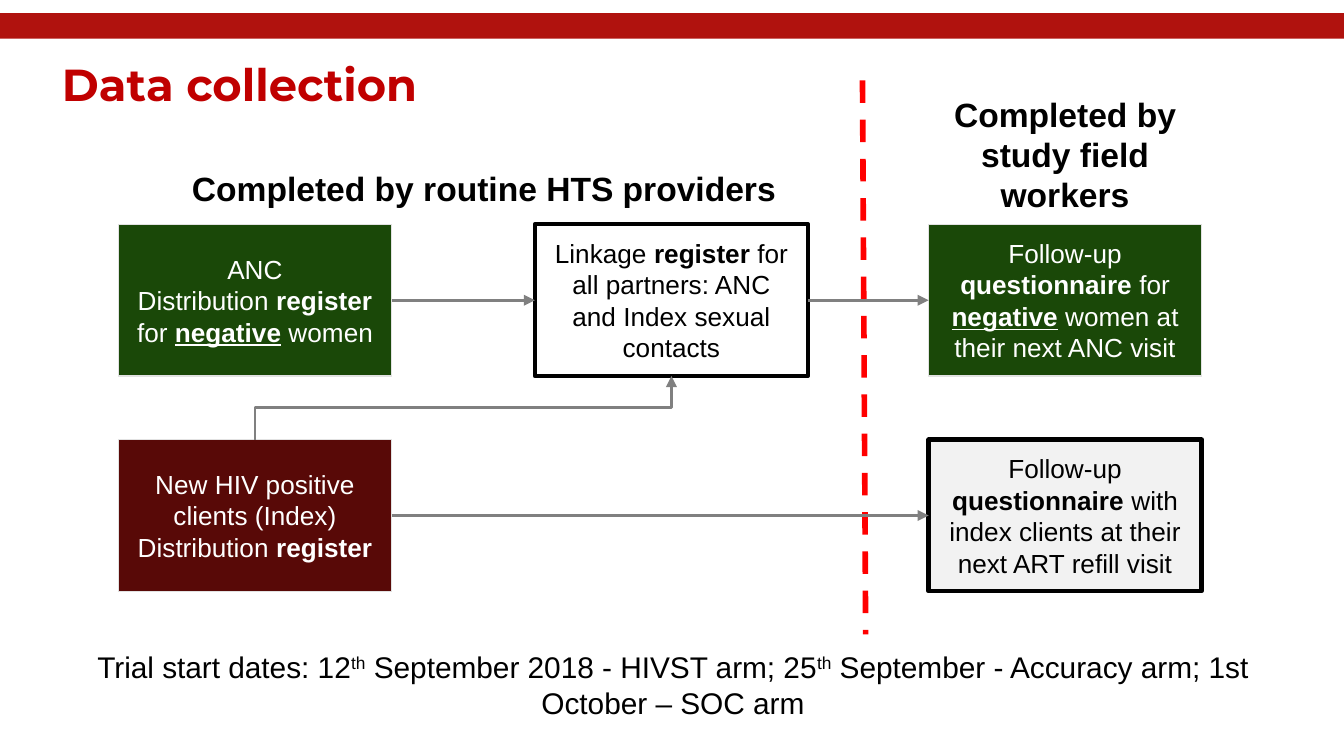
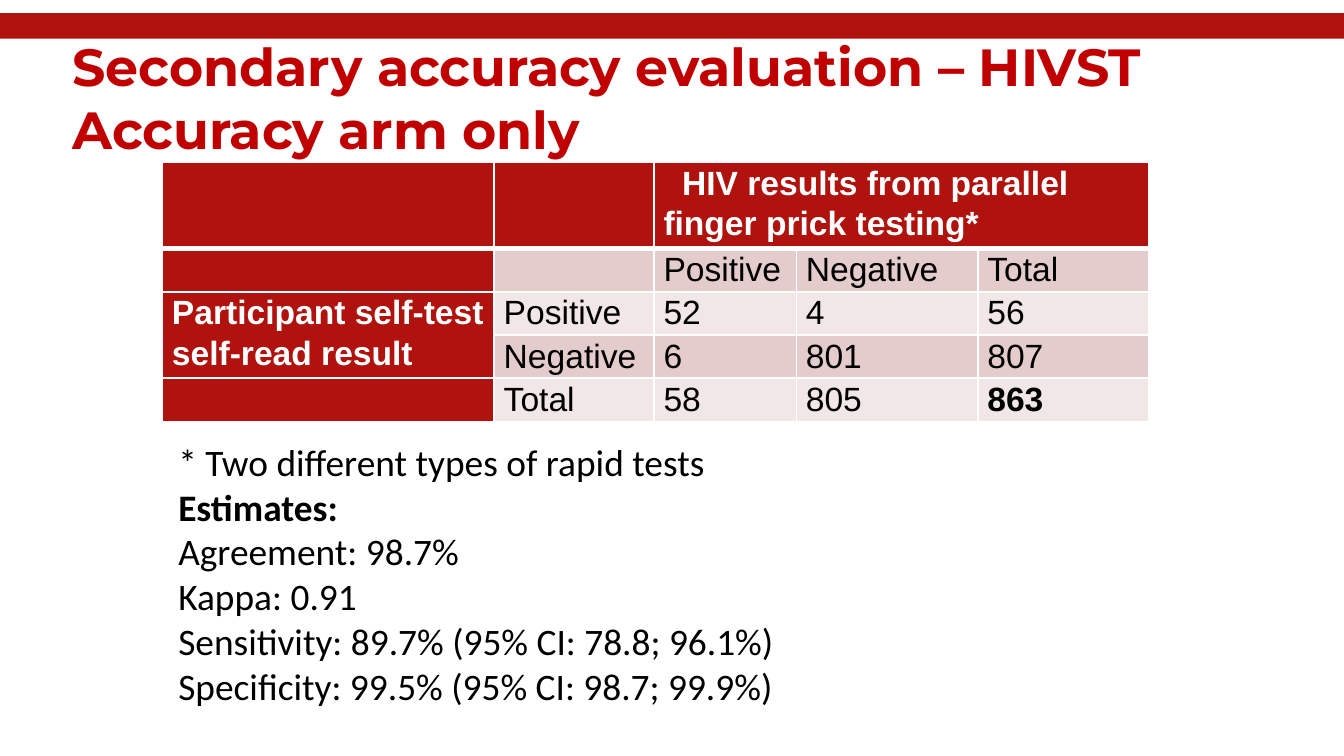
"""Builds two slides on trial data collection and self-test accuracy."""
from lxml import etree
from pptx import Presentation
from pptx import util as u
from pptx.dml.color import RGBColor
from pptx.enum import dml, shapes, text
from pptx.oxml import ns

BAND_RED = RGBColor(0xB0, 0x12, 0x0E)
TITLE_RED = RGBColor(0xC0, 0x00, 0x00)
DIVIDER_RED = RGBColor(0xFF, 0x00, 0x00)
MAROON = RGBColor(0x58, 0x09, 0x07)
GREEN = RGBColor(0x1A, 0x48, 0x08)
ROSE = RGBColor(0xE4, 0xCC, 0xCC)
PALE_ROSE = RGBColor(0xF2, 0xE7, 0xE7)
PALE_GREY = RGBColor(0xF2, 0xF2, 0xF2)
EDGE_GREY = RGBColor(0xE2, 0xE2, 0xE2)
ARROW_GREY = RGBColor(0x80, 0x80, 0x80)
BLACK = RGBColor(0, 0, 0)
WHITE = RGBColor(0xFF, 0xFF, 0xFF)

TOP, LEFT, BOTTOM, RIGHT = range(4)
CENTER = text.PP_ALIGN.CENTER
MIDDLE = text.MSO_ANCHOR.MIDDLE


def sub(parent, tag, **attributes):
    """Append a DrawingML child element and return it."""
    return etree.SubElement(parent, ns.qn(f"a:{tag}"), attributes)


def write(frame, paragraphs, *, size, color=BLACK, font="Arial", bold=False,
          align=None, spacing=None, indent=None):
    """Write paragraphs of strings or (string, marks) parts; marks are b, u and ^."""
    frame.word_wrap = True
    for number, parts in enumerate(paragraphs):
        paragraph = frame.add_paragraph() if number else frame.paragraphs[0]
        paragraph.alignment = align
        paragraph.line_spacing = spacing
        if indent:
            paragraph._p.get_or_add_pPr().set("indent", str(indent))
        for part in [parts] if isinstance(parts, str) else parts:
            words, marks = (part, "") if isinstance(part, str) else part
            run = paragraph.add_run()
            run.text = words
            run.font.name, run.font.size = font, u.Pt(size)
            run.font.color.rgb = color
            run.font.bold = bold or "b" in marks
            if "u" in marks:
                run.font.underline = True
            if "^" in marks:
                run._r.get_or_add_rPr().set("baseline", "30000")


class Deck:
    """Holds the deck's style and the slide being filled."""

    def __init__(self):
        """Start an empty wide presentation."""
        self.show = Presentation()
        self.show.slide_width, self.show.slide_height = u.Cm(25.4), u.Cm(14.29)

    def start(self, title, at, size):
        """Add a slide with the red band and its title."""
        self.slide = self.show.slides.add_slide(self.show.slide_layouts[6])
        self.box((0, 0.25, 25.4, 0.48), BAND_RED)
        self.label([title], at, insets=(0, 0.1), anchor=MIDDLE, size=size,
                   color=TITLE_RED, font="Montserrat", bold=True)

    def box(self, at, fill=None, edge=None, weight=0.75, words=None, color=WHITE):
        """Add a rectangle, with centred words if given."""
        box = self.slide.shapes.add_shape(
            shapes.MSO_SHAPE.RECTANGLE, *map(u.Cm, at))
        box.shadow.inherit = False
        if fill is None:
            box.fill.background()
        else:
            box.fill.solid()
            box.fill.fore_color.rgb = fill
        if edge is None:
            box.line.fill.background()
        else:
            box.line.color.rgb, box.line.width = edge, u.Pt(weight)
        if words:
            self.pad(box.text_frame, 0.25, 0.25)
            box.text_frame.vertical_anchor = MIDDLE
            write(box.text_frame, words, size=14, color=color, align=CENTER)
        return box

    def label(self, words, at, insets=(0.25, 0.25), anchor=text.MSO_ANCHOR.TOP,
              **style):
        """Add a text box."""
        frame = self.slide.shapes.add_textbox(*map(u.Cm, at)).text_frame
        self.pad(frame, *insets)
        frame.vertical_anchor = anchor
        write(frame, words, **style)

    def pad(self, frame, across, down):
        """Set the inner margins of a text frame or a cell."""
        frame.margin_left = frame.margin_right = u.Cm(across)
        frame.margin_top = frame.margin_bottom = u.Cm(down)

    def line(self, ends, color, weight, kind=shapes.MSO_CONNECTOR.STRAIGHT):
        """Add a plain connector."""
        line = self.slide.shapes.add_connector(kind, *map(u.Cm, ends))
        line.line.color.rgb, line.line.width = color, u.Pt(weight)
        sub(line._element.spPr, "effectLst")
        return line

    def arrow(self, source, source_side, target, target_side,
              kind=shapes.MSO_CONNECTOR.STRAIGHT):
        """Join two boxes with a grey arrow."""
        arrow = self.line((0, 0, 1, 1), ARROW_GREY, 1.5, kind)
        arrow.begin_connect(source, source_side)
        arrow.end_connect(target, target_side)
        sub(arrow.line._get_or_add_ln(), "tailEnd", type="triangle")
        return arrow

    def rising_arrow(self, source, target):
        """Join a box's top to the bottom of a box up to its right."""
        arrow = self.arrow(source, TOP, target, BOTTOM, shapes.MSO_CONNECTOR.ELBOW)
        across, up = arrow.width, arrow.height
        shift = (across - up) // 2
        arrow.left, arrow.top = arrow.left + shift, arrow.top - shift
        arrow.width, arrow.height = up, across
        for name, value in (("rot", "5400000"), ("flipH", "1"), ("flipV", "1")):
            arrow._element.spPr.xfrm.set(name, value)

    def table(self, rows, at, widths, heights, spans):
        """Add a table with a red header row and column."""
        table = self.slide.shapes.add_table(
            len(rows), len(widths), *map(u.Cm, at),
            u.Cm(sum(widths)), u.Cm(sum(heights))).table
        for column, width in zip(table.columns, widths):
            column.width = u.Cm(width)
        for row, height in zip(table.rows, heights):
            row.height = u.Cm(height)
        for r, row in enumerate(rows):
            for c, words in enumerate(row):
                cell = table.cell(r, c)
                header = r == 0 or c == 0
                self.pad(cell, 0.18, 0)
                self.edge(cell, 3 if r == 0 else 1, 3 if r == 1 else 1)
                cell.fill.solid()
                cell.fill.fore_color.rgb = (
                    BAND_RED if header else ROSE if r % 2 else PALE_ROSE)
                if words:
                    write(cell.text_frame, [words], size=18, spacing=1.07,
                          color=WHITE if header else BLACK, bold=header,
                          indent=u.Cm(0.35) if r == 0 else None)
        for first, last in spans:
            table.cell(*first).merge(table.cell(*last))

    def edge(self, cell, below, above):
        """Give a cell white borders."""
        properties = cell._tc.get_or_add_tcPr()
        for side, weight in (("L", 1), ("R", 1), ("T", above), ("B", below)):
            border = sub(properties, f"ln{side}", w=str(u.Pt(weight)))
            sub(sub(border, "solidFill"), "srgbClr", val=str(WHITE))


def data_collection(deck):
    """Draw the flow of registers and questionnaires."""
    deck.start("Data collection", (1.17, 0.71, 14.86, 1.73), 24)
    first, second, third = 2.24, 10.11, 17.55
    upper, lower = 4.24, 8.31
    size = (5.16, 2.87)
    anc = deck.box((first, upper, *size), GREEN, EDGE_GREY, words=[
        "ANC",
        ["Distribution ", ("register", "b"), " for ", ("negative", "bu"), " women"]])
    linkage = deck.box((second, upper, *size), None, BLACK, 2.25, color=BLACK, words=[
        ["Linkage ", ("register", "b"),
         " for all partners: ANC and Index sexual contacts"]])
    anc_visit = deck.box((third, upper, *size), GREEN, EDGE_GREY, words=[
        ["Follow-up ", ("questionnaire", "b"), " for ", ("negative", "bu"),
         " women at their next ANC visit"]])
    index = deck.box((first, lower, *size), MAROON, EDGE_GREY, words=[
        "New HIV positive clients (Index)", ["Distribution ", ("register", "b")]])
    refill_visit = deck.box(
        (third, lower, *size), PALE_GREY, BLACK, 2.25, color=BLACK, words=[
            ["Follow-up ", ("questionnaire", "b"),
             " with index clients at their next ART refill visit"]])
    for words, at in (
            ("Completed by routine HTS providers", (2.24, 2.92, 13.82, 1.27)),
            ("Completed by study field workers", (third, 1.52, 5.16, 2.82))):
        deck.label([words], at, size=18, bold=True, align=CENTER)
    divider = deck.line((16.3, 1.52, 16.36, 11.99), DIVIDER_RED, 3)
    divider.line.dash_style = dml.MSO_LINE.DASH
    for source, target in ((anc, linkage), (index, refill_visit), (linkage, anc_visit)):
        deck.arrow(source, RIGHT, target, LEFT)
    deck.rising_arrow(index, linkage)
    deck.label(
        [["Trial start dates: 12", ("th", "^"), " September 2018 - HIVST arm; 25",
          ("th", "^"), " September - Accuracy arm; 1st October – SOC arm"]],
        (0.91, 12.14, 23.62, 1.63), insets=(0.25, 0.13), size=16, align=CENTER)


def accuracy(deck):
    """Show the accuracy table and its estimates."""
    deck.start("Secondary accuracy evaluation – HIVST Accuracy arm only",
               (1.37, 0.97, 23.06, 1.73), 28)
    deck.table(
        [["", "", "HIV results from parallel finger prick testing*", "", ""],
         ["", "", "Positive", "Negative", "Total"],
         ["Participant self-test self-read result", "Positive", "52", "4", "56"],
         ["", "Negative", "6", "801", "807"],
         ["", "Total", "58", "805", [("863", "b")]]],
        (3.07, 3.07), (6.27, 3.02, 2.69, 3.43, 3.23), (1.49, *[0.76] * 4),
        spans=[((0, 2), (0, 4)), ((2, 0), (3, 0))])
    deck.label(
        ["* Two different types of rapid tests", [("Estimates:", "b")],
         "Agreement: 98.7%", "Kappa: 0.91",
         "Sensitivity: 89.7% (95% CI: 78.8; 96.1%)",
         "Specificity: 99.5% (95% CI: 98.7; 99.9%)"],
        (3.12, 8.15, 12.8, 5.38), insets=(0.25, 0.13), anchor=MIDDLE,
        size=20, font="Calibri")


def main():
    """Build and save the deck."""
    deck = Deck()
    data_collection(deck)
    accuracy(deck)
    deck.show.save("out.pptx")


if __name__ == "__main__":
    main()
